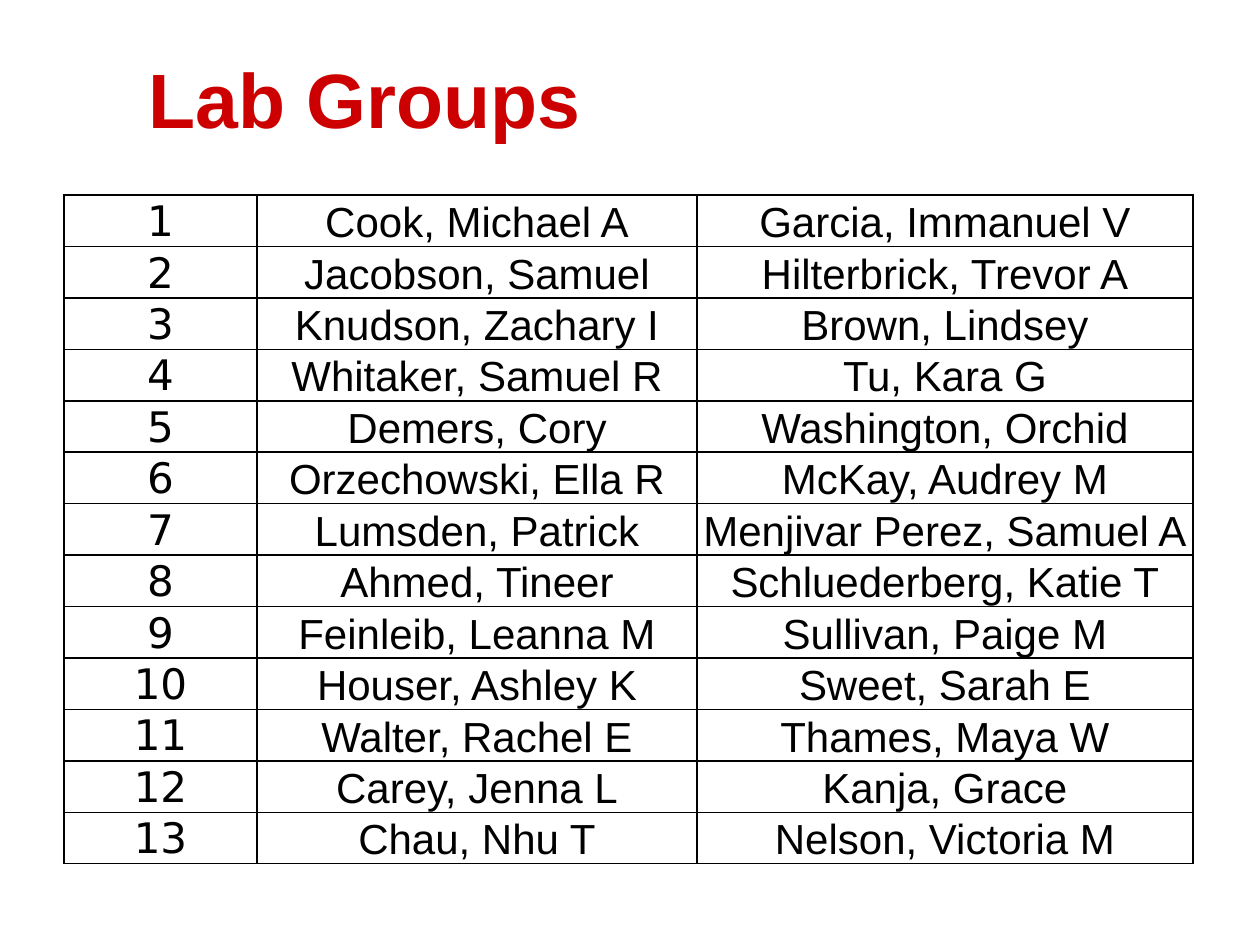
"""Build the Lab Groups slide: a title above a bordered table of lab partners."""
from pptx import Presentation
from pptx.dml.color import RGBColor
from pptx.enum import text
from pptx.oxml import parse_xml
from pptx.oxml.ns import nsdecls
from pptx.util import Pt

TITLE = "Lab Groups"
GROUPS = [
    ("Cook, Michael A", "Garcia, Immanuel V"),
    ("Jacobson, Samuel", "Hilterbrick, Trevor A"),
    ("Knudson, Zachary I", "Brown, Lindsey"),
    ("Whitaker, Samuel R", "Tu, Kara G"),
    ("Demers, Cory", "Washington, Orchid"),
    ("Orzechowski, Ella R", "McKay, Audrey M"),
    ("Lumsden, Patrick", "Menjivar Perez, Samuel A"),
    ("Ahmed, Tineer", "Schluederberg, Katie T"),
    ("Feinleib, Leanna M", "Sullivan, Paige M"),
    ("Houser, Ashley K", "Sweet, Sarah E"),
    ("Walter, Rachel E", "Thames, Maya W"),
    ("Carey, Jenna L", "Kanja, Grace"),
    ("Chau, Nhu T", "Nelson, Victoria M"),
]

RED = RGBColor(0xCC, 0x00, 0x00)
BLACK = RGBColor(0x00, 0x00, 0x00)
WHITE = RGBColor(0xFF, 0xFF, 0xFF)
PX = 914400 // 126
SLIDE = (1260, 945)
TITLE_BOX = (136, 38, 1092, 157)
TITLE_INSET = 14
TABLE_AT = (64, 195)
TABLE_HEIGHT = 659
COLUMNS = (193, 440, 496)
COLUMN_FONTS = ("DejaVu Sans", "Arial", "Arial")


def px(*lengths):
    return [n * PX for n in lengths]


def style_font(p, name, size, color, bold=False):
    p.font.name, p.font.size, p.font.bold = name, Pt(size), bold
    p.font.color.rgb = color


def add_borders(cell):
    tc_pr = cell._tc.get_or_add_tcPr()
    for i, side in enumerate(("lnL", "lnR", "lnT", "lnB")):
        tc_pr.insert(i, parse_xml(
            f'<a:{side} {nsdecls("a")} w="{Pt(1)}"><a:solidFill>'
            f'<a:srgbClr val="{BLACK}"/></a:solidFill></a:{side}>'))


def add_title(s):
    tf = s.shapes.add_textbox(*px(*TITLE_BOX)).text_frame
    tf.word_wrap = True
    tf.margin_top = TITLE_INSET * PX
    p = tf.paragraphs[0]
    p.text = TITLE
    style_font(p, "Arial", 44, RED, bold=True)


def fill_cell(cell, value, col):
    cell.margin_left = cell.margin_right = cell.margin_top = PX
    cell.margin_bottom = 0
    cell.vertical_anchor = text.MSO_ANCHOR.BOTTOM
    if col:
        cell.fill.solid()
        cell.fill.fore_color.rgb = WHITE
    else:
        cell.fill.background()
    add_borders(cell)
    p = cell.text_frame.paragraphs[0]
    p.text = value
    p.alignment = text.PP_ALIGN.CENTER
    style_font(p, COLUMN_FONTS[col], 24, BLACK)


def add_groups(s):
    table = s.shapes.add_table(
        len(GROUPS), len(COLUMNS),
        *px(*TABLE_AT, sum(COLUMNS), TABLE_HEIGHT)).table
    table.first_row = table.horz_banding = False
    for column, width in zip(table.columns, COLUMNS):
        column.width = width * PX
    for row, names in enumerate(GROUPS):
        for col, value in enumerate((str(row + 1), *names)):
            fill_cell(table.cell(row, col), value, col)


def main():
    prs = Presentation()
    prs.slide_width, prs.slide_height = px(*SLIDE)
    s = prs.slides.add_slide(prs.slide_layouts[6])
    add_title(s)
    add_groups(s)
    prs.save("out.pptx")


if __name__ == "__main__":
    main()
